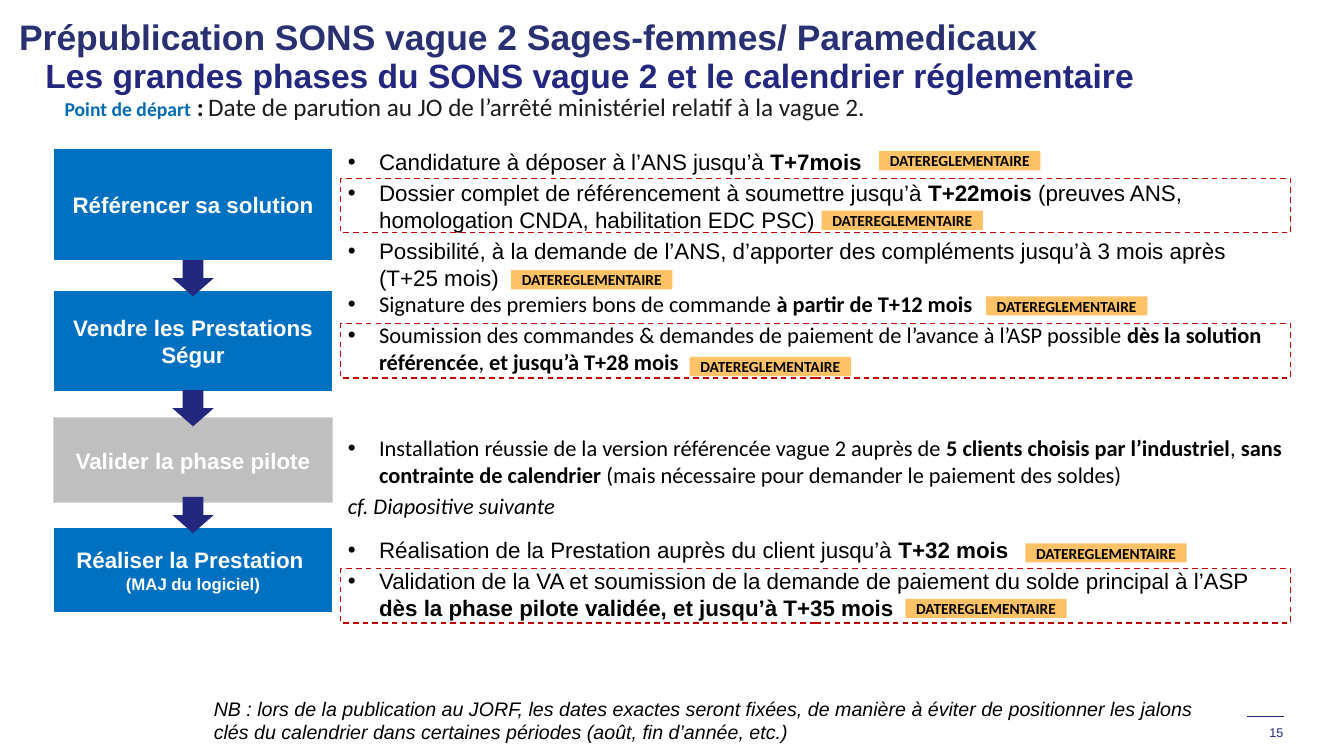
"""Build the slide on the phases and regulatory calendar of SONS wave 2."""
from lxml import etree
from pptx import Presentation
from pptx import util as u
from pptx.dml.color import RGBColor
from pptx.enum import dml, shapes, text
from pptx.oxml.ns import qn

COLORS = {"navy": "23277E", "heading": "293173", "blue": "0070C0", "label": "006AB2",
          "gray": "BFBFBF", "gray_edge": "D9D9D9", "white": "FFFFFF", "black": "000000",
          "ink": "1D1C1D", "red": "C00000", "orange": "FFC266"}

HEADING = "Prépublication SONS vague 2 Sages-femmes/ Paramedicaux"
TITLE = "Les grandes phases du SONS vague 2 et le calendrier réglementaire"
START = [("Point de départ", 14, "label", True), (" :", 18, "black", True),
         (" ", 14, "black", False),
         ("Date de parution au JO\u00a0de l’arrêté ministériel relatif à la vague 2.",
          18, "ink", False)]
NOTE = ("NB : lors de la publication au JORF, les dates exactes seront fixées, de manière à "
        "éviter de positionner les jalons clés du calendrier dans certaines périodes "
        "(août, fin d’année, etc.)")
PAGE = "15"
TAG = "DATEREGLEMENTAIRE"

PHASES = [
    {"box": (1.47, 1.11), "fill": "blue", "edge": "white",
     "label": [("Référencer sa solution", 16)],
     "list": (1.47, 1.11), "font": "Arial",
     "points": ["Candidature à déposer à l’ANS jusqu’à *T+7mois*",
                "Dossier complet de référencement à soumettre jusqu’à *T+22mois *"
                "(preuves ANS, homologation CNDA, habilitation EDC PSC)",
                "Possibilité, à la demande de l’ANS, d’apporter des compléments "
                "jusqu’à 3 mois après (T+25 mois)"]},
    {"box": (2.88, 1), "fill": "blue", "edge": "white",
     "label": [("Vendre les Prestations Ségur", 16)],
     "list": (2.88, 1.07), "font": "Calibri",
     "points": ["Signature des premiers bons de commande *à partir de T+12 mois*",
                "Soumission des commandes & demandes de paiement de l’avance à l’ASP possible "
                "*dès la solution référencée*, *et jusqu’à T+28 mois*"]},
    {"box": (4.14, 0.85), "fill": "gray", "edge": "gray_edge",
     "label": [("Valider la phase pilote", 16)],
     "list": (4.31, 0.54), "font": "Calibri",
     "points": ["Installation réussie de la version référencée vague 2 auprès de "
                "*5 clients choisis par l’industriel*, *sans contrainte de calendrier *"
                "(mais nécessaire pour demander le paiement des soldes)"],
     "remark": "cf. Diapositive suivante"},
    {"box": (5.23, 0.85), "fill": "blue", "edge": "white",
     "label": [("Réaliser la Prestation ", 16), ("(MAJ du logiciel)", 12)],
     "list": (5.32, 0.54), "font": "Arial",
     "points": ["Réalisation de la Prestation auprès du client jusqu’à *T+32 mois*",
                "Validation de la VA et soumission de la demande de paiement du solde "
                "principal à l’ASP *dès la phase pilote validée, et jusqu’à T+35 mois*"]},
]
ARROW_TOPS = [2.58, 3.87, 4.93]
FRAME_TOPS = [1.77, 3.21, 5.64]
TAG_SPOTS = [(8.72, 1.5), (8.15, 2.09), (5.07, 2.68), (9.78, 2.94),
             (10.17, 5.39), (8.98, 5.94), (6.84, 3.54)]


def color(name):
    return RGBColor.from_string(COLORS[name])


def place(shape, left, top, width, height):
    shape.left, shape.top = u.Inches(left), u.Inches(top)
    shape.width, shape.height = u.Inches(width), u.Inches(height)


def prepare(shape, anchor=text.MSO_ANCHOR.TOP, vertical_inset=0):
    frame = shape.text_frame
    frame.word_wrap = True
    frame.auto_size = text.MSO_AUTO_SIZE.NONE
    frame.vertical_anchor = anchor
    frame.margin_left = frame.margin_right = 0
    frame.margin_top = frame.margin_bottom = u.Inches(vertical_inset)
    return frame


def style(run, size, name, font="Arial", bold=False, italic=False):
    run.font.size, run.font.name = u.Pt(size), font
    run.font.bold, run.font.italic = bold, italic
    run.font.color.rgb = color(name)


def align(paragraph, alignment=text.PP_ALIGN.LEFT, after=0):
    paragraph.alignment = alignment
    paragraph.space_before, paragraph.space_after = u.Pt(0), u.Pt(after)
    paragraph.line_spacing = 1.0


def write(frame, lines, name, alignment=text.PP_ALIGN.LEFT, after=0, **look):
    frame.text = "\n".join(line for line, size in lines)
    for paragraph, (line, size) in zip(frame.paragraphs, lines):
        align(paragraph, alignment, after)
        style(paragraph.runs[0], size, name, **look)


def add_block(slide, kind, area, fill=None, edge=None, width=0.75):
    shape = slide.shapes.add_shape(kind, *map(u.Inches, area))
    shape.shadow.inherit = False
    if fill:
        shape.fill.solid()
        shape.fill.fore_color.rgb = color(fill)
    else:
        shape.fill.background()
    if edge:
        shape.line.color.rgb = color(edge)
        shape.line.width = u.Pt(width)
    else:
        shape.line.fill.background()
    return shape


def add_text(slide, area, lines, name, anchor=text.MSO_ANCHOR.TOP, **look):
    box = slide.shapes.add_textbox(*map(u.Inches, area))
    write(prepare(box, anchor), lines, name, **look)


def set_bullet(paragraph, bulleted):
    properties = paragraph._p.get_or_add_pPr()
    indent = u.Inches(0.31) if bulleted else 0
    properties.set("marL", str(indent))
    properties.set("indent", str(-indent))
    if bulleted:
        tint = etree.SubElement(properties, qn("a:buClr"))
        etree.SubElement(tint, qn("a:srgbClr"), val=COLORS["black"])
        etree.SubElement(properties, qn("a:buFont"), typeface="Arial")
        etree.SubElement(properties, qn("a:buChar"), char="•")
    else:
        etree.SubElement(properties, qn("a:buNone"))


def fill_list(placeholder, phase):
    top, height = phase["list"]
    place(placeholder, 3.45, top, 9.33, height)
    frame = prepare(placeholder)
    remarks = [phase["remark"]] if "remark" in phase else []
    for index, line in enumerate(phase["points"] + remarks):
        paragraph = frame.add_paragraph() if index else frame.paragraphs[0]
        set_bullet(paragraph, line not in remarks)
        align(paragraph, after=3)
        for part, words in enumerate(line.split("*")):
            if words:
                run = paragraph.add_run()
                run.text = words
                style(run, 16, "black", phase["font"], part % 2 == 1, line in remarks)


def main():
    presentation = Presentation()
    presentation.slide_width, presentation.slide_height = u.Inches(13.33), u.Inches(7.5)
    slide = presentation.slides.add_slide(presentation.slide_layouts.get_by_name("Comparison"))
    title, *lists = slide.placeholders
    middle, center = text.MSO_ANCHOR.MIDDLE, text.PP_ALIGN.CENTER
    rectangle = shapes.MSO_SHAPE.RECTANGLE

    place(title, 0.45, 0.43, 10.93, 0.62)
    write(prepare(title, middle), [(TITLE, 24)], "navy", bold=True)

    for phase, placeholder in zip(PHASES, lists):
        top, height = phase["box"]
        box = add_block(slide, rectangle, (0.53, top, 2.77, height),
                        phase["fill"], phase["edge"])
        write(prepare(box, middle, 0.1), phase["label"], "white", center, bold=True)
        fill_list(placeholder, phase)

    for top in ARROW_TOPS:
        add_block(slide, shapes.MSO_SHAPE.DOWN_ARROW, (1.71, top, 0.41, 0.36), "navy")
    for top in FRAME_TOPS:
        frame = add_block(slide, rectangle, (3.38, top, 9.42, 0.54), edge="red", width=1)
        frame.line.dash_style = dml.MSO_LINE.DASH
    for left, top in TAG_SPOTS:
        tag = add_block(slide, rectangle, (left, top, 1.6, 0.19), "orange")
        write(prepare(tag, middle), [(TAG, 11)], "black", center, font="Calibri", bold=True)

    start = prepare(slide.shapes.add_textbox(*map(u.Inches, (0.64, 1.04, 11.71, 0.48))))
    start.paragraphs[0].line_spacing = u.Pt(12)
    for words, size, name, bold in START:
        run = start.paragraphs[0].add_run()
        run.text = words
        style(run, size, name, "Calibri", bold)

    add_text(slide, (0.19, -0.19, 12.17, 1.1), [(HEADING, 25.3)], "heading", middle, bold=True)
    add_text(slide, (2.12, 6.91, 9.89, 0.35), [(NOTE, 14)], "black", after=3, italic=True)
    add_text(slide, (12.27, 7.12, 0.46, 0.22), [(PAGE, 9)], "navy",
             text.MSO_ANCHOR.BOTTOM, alignment=text.PP_ALIGN.RIGHT)

    rule = slide.shapes.add_connector(shapes.MSO_CONNECTOR.STRAIGHT,
                                      *map(u.Inches, (12.73, 7.11, 12.37, 7.11)))
    rule.line.color.rgb = color("navy")
    rule.line.width = u.Pt(0.75)
    etree.SubElement(rule._element.spPr, qn("a:effectLst"))
    presentation.save("out.pptx")


if __name__ == "__main__":
    main()
